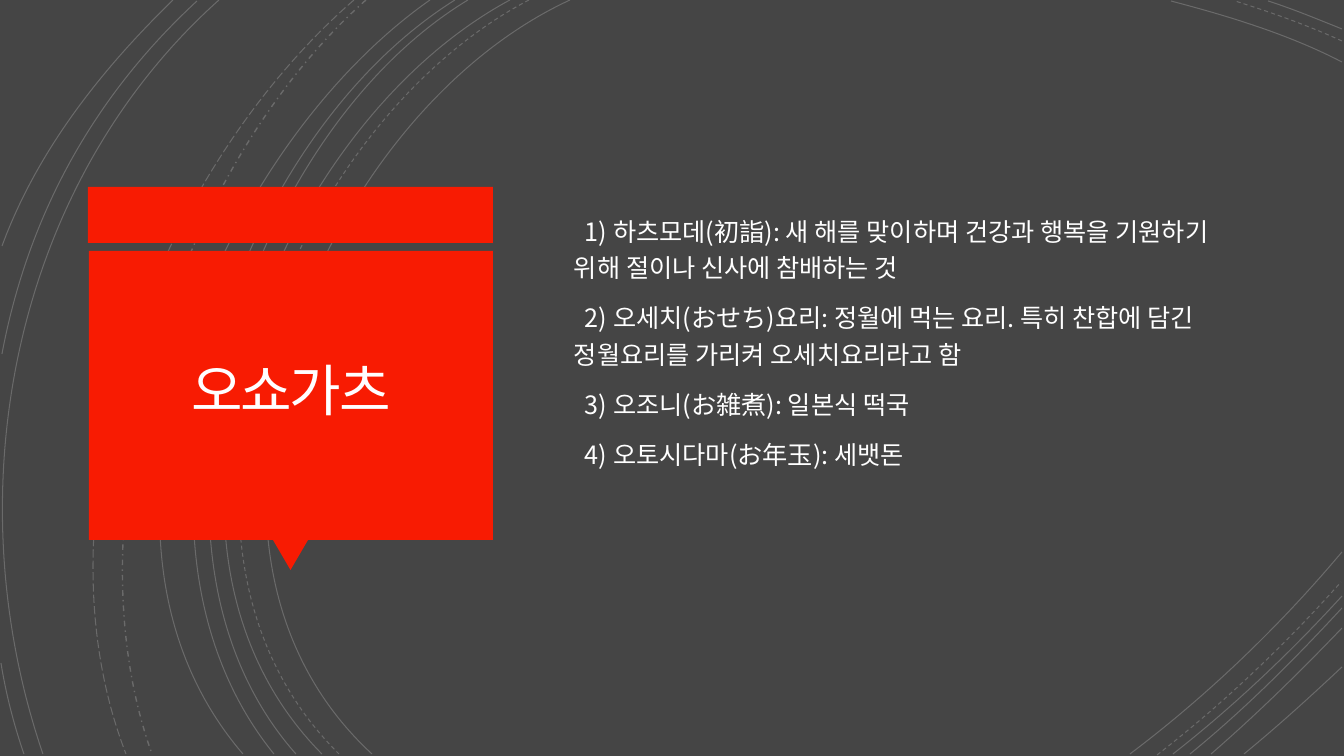
from dataclasses import dataclass

from lxml.etree import SubElement
from pptx import Presentation
from pptx.dml.color import RGBColor
from pptx.enum.dml import MSO_LINE
from pptx.enum.shapes import MSO_SHAPE
from pptx.enum.text import MSO_ANCHOR, MSO_AUTO_SIZE, PP_ALIGN
from pptx.oxml.ns import qn
from pptx.shapes.autoshape import Shape
from pptx.slide import Slide
from pptx.util import Emu, Pt

SLIDE_WIDTH, SLIDE_HEIGHT = 1344, 756
EMU_PER_PX = 12192000 / SLIDE_WIDTH

CHARCOAL = RGBColor(0x45, 0x45, 0x45)
RED = RGBColor(0xF8, 0x1B, 0x02)
WHITE = RGBColor(0xFF, 0xFF, 0xFF)
OFF_WHITE = RGBColor(0xFF, 0xFE, 0xFF)
TITLE_FONT = "Calibri"
BODY_FONT = "Noto Sans CJK KR"
NO_BREAK_SPACE = chr(160)

Point = tuple[int, int]


@dataclass(frozen=True)
class Arc:
    start: Point
    first_control: Point
    second_control: Point
    end: Point
    dash: MSO_LINE = MSO_LINE.SOLID
    weight: float = 0.75


@dataclass(frozen=True)
class Box:
    left: int
    top: int
    width: int
    height: int


@dataclass(frozen=True)
class Panel:
    kind: MSO_SHAPE
    box: Box
    rotation: int = 0
    color: RGBColor = RED


ARCS = [
    Arc((570, 0), (318, 116), (144, 544), (372, 754)),
    Arc((1342, 62), (1288, 34), (1228, 16), (1171, 1)),
    Arc((1130, 754), (1207, 696), (1279, 627), (1342, 552)),
    Arc((529, 0), (287, 126), (124, 541), (339, 754), MSO_LINE.DASH),
    Arc((1342, 41), (1307, 25), (1270, 12), (1235, 1), MSO_LINE.DASH),
    Arc((1157, 755), (1223, 704), (1285, 645), (1341, 582), MSO_LINE.DASH),
    Arc((510, 0), (272, 128), (111, 541), (322, 754)),
    Arc((1342, 29), (1317, 19), (1293, 9), (1268, 1)),
    Arc((1173, 754), (1233, 707), (1290, 653), (1342, 596)),
    Arc((468, 0), (246, 134), (111, 545), (296, 754)),
    Arc((1190, 754), (1244, 710), (1294, 660), (1342, 608)),
    Arc((455, 0), (233, 139), (98, 537), (274, 754)),
    Arc((1211, 754), (1256, 715), (1300, 672), (1342, 628)),
    Arc((430, 0), (219, 148), (53, 533), (243, 754)),
    Arc((1244, 754), (1277, 727), (1309, 698), (1342, 667)),
    Arc((366, 0), (177, 167), (66, 513), (152, 754), MSO_LINE.DASH_DOT, 1),
    Arc((354, 0), (158, 170), (29, 503), (126, 754), MSO_LINE.LONG_DASH),
    Arc((219, 0), (11, 186), (-46, 494), (43, 754)),
    Arc((197, 1), (93, 97), (28, 216), (2, 354)),
    Arc((1, 663), (6, 694), (14, 725), (24, 754)),
    Arc((173, 0), (101, 70), (37, 151), (2, 246)),
]

BACKDROP = Panel(MSO_SHAPE.RECTANGLE, Box(0, 0, SLIDE_WIDTH, 754), color=CHARCOAL)
PANELS = [
    Panel(MSO_SHAPE.RECTANGLE, Box(88, 187, 405, 56)),
    Panel(MSO_SHAPE.ISOSCELES_TRIANGLE, Box(273, 540, 35, 30), 180),
    Panel(MSO_SHAPE.RECTANGLE, Box(89, 251, 404, 289)),
]

TITLE_BOX = Box(98, 259, 386, 271)
BODY_BOX = Box(564, 89, 692, 579)
CUSTOMS = [
    "1) 하츠모데(初詣): 새 해를 맞이하며 건강과 행복을 기원하기 위해 절이나 신사에 참배하는 것",
    "2) 오세치(おせち)요리: 정월에 먹는 요리. 특히 "
    + NO_BREAK_SPACE.join(["찬합에", "담긴 정월요리를 가리켜 오세치요리라고 함"]),
    "3) 오조니(お雑煮): 일본식 떡국",
    "4) 오토시다마(お年玉): 세뱃돈",
]


def px(length: int) -> Emu:
    return Emu(round(length * EMU_PER_PX))


def draw_arc(page: Slide, arc: Arc) -> None:
    """Draw one cubic curve as a faint white line."""
    builder = page.shapes.build_freeform(*arc.start, scale=EMU_PER_PX)
    builder.add_line_segments(
        [arc.first_control, arc.second_control, arc.end], close=False
    )
    shape = builder.convert_to_shape()
    outline = shape.element.find(".//" + qn("a:path"))
    segments = outline.findall(qn("a:lnTo"))
    curve = SubElement(outline, qn("a:cubicBezTo"))
    for segment in segments:
        curve.append(segment[0])
        outline.remove(segment)
    shape.shadow.inherit = False
    shape.fill.background()
    shape.line.color.rgb = WHITE
    shape.line.width = Pt(arc.weight)
    shape.line.dash_style = arc.dash
    color = shape.element.find(".//" + qn("a:ln")).find(".//" + qn("a:srgbClr"))
    SubElement(color, qn("a:alpha"), val="20000")


def draw_panel(page: Slide, panel: Panel) -> None:
    box = panel.box
    shape = page.shapes.add_shape(
        panel.kind, px(box.left), px(box.top), px(box.width), px(box.height)
    )
    shape.rotation = panel.rotation
    shape.shadow.inherit = False
    shape.fill.solid()
    shape.fill.fore_color.rgb = panel.color
    shape.line.fill.background()


def place_in_front(shape: Shape, box: Box) -> None:
    shape.left, shape.top = px(box.left), px(box.top)
    shape.width, shape.height = px(box.width), px(box.height)
    shape.element.getparent().append(shape.element)
    shape.text_frame.word_wrap = True
    shape.text_frame.auto_size = MSO_AUTO_SIZE.NONE


def write_title(title: Shape) -> None:
    place_in_front(title, TITLE_BOX)
    frame = title.text_frame
    frame.margin_left = frame.margin_right = px(25)
    frame.margin_top = frame.margin_bottom = px(25)
    frame.vertical_anchor = MSO_ANCHOR.MIDDLE
    frame.text = "오쇼가츠"
    para = frame.paragraphs[0]
    para.alignment = PP_ALIGN.CENTER
    para.line_spacing = 0.85
    para.font.name = TITLE_FONT
    para.font.size = Pt(40)
    para.font.color.rgb = OFF_WHITE
    para.font._element.set("spc", "-150")


def write_customs(body: Shape) -> None:
    place_in_front(body, BODY_BOX)
    frame = body.text_frame
    frame.margin_left = frame.margin_right = px(10)
    frame.margin_top = px(121)
    frame.vertical_anchor = MSO_ANCHOR.TOP
    frame.text = "\n".join(CUSTOMS)
    for para in frame.paragraphs:
        para.alignment = PP_ALIGN.LEFT
        para.line_spacing = 1.2
        para.space_before = Pt(0)
        para.space_after = Pt(10)
        para.font.name = BODY_FONT
        para.font.size = Pt(18)
        para.font.color.rgb = WHITE
        properties = para.font._element.getparent()
        properties.set("marL", "0")
        properties.set("indent", str(px(11)))
        SubElement(para.font._element, qn("a:ea"), typeface=BODY_FONT)
        bullet = SubElement(properties, qn("a:buNone"))
        para.font._element.addprevious(bullet)


def main() -> None:
    deck = Presentation()
    deck.slide_width, deck.slide_height = px(SLIDE_WIDTH), px(SLIDE_HEIGHT)
    page = deck.slides.add_slide(deck.slide_layouts[1])
    page.background.fill.solid()
    page.background.fill.fore_color.rgb = CHARCOAL
    draw_panel(page, BACKDROP)
    for arc in ARCS:
        draw_arc(page, arc)
    for panel in PANELS:
        draw_panel(page, panel)
    write_title(page.shapes.title)
    write_customs(page.placeholders[1])
    deck.save("out.pptx")


if __name__ == "__main__":
    main()
